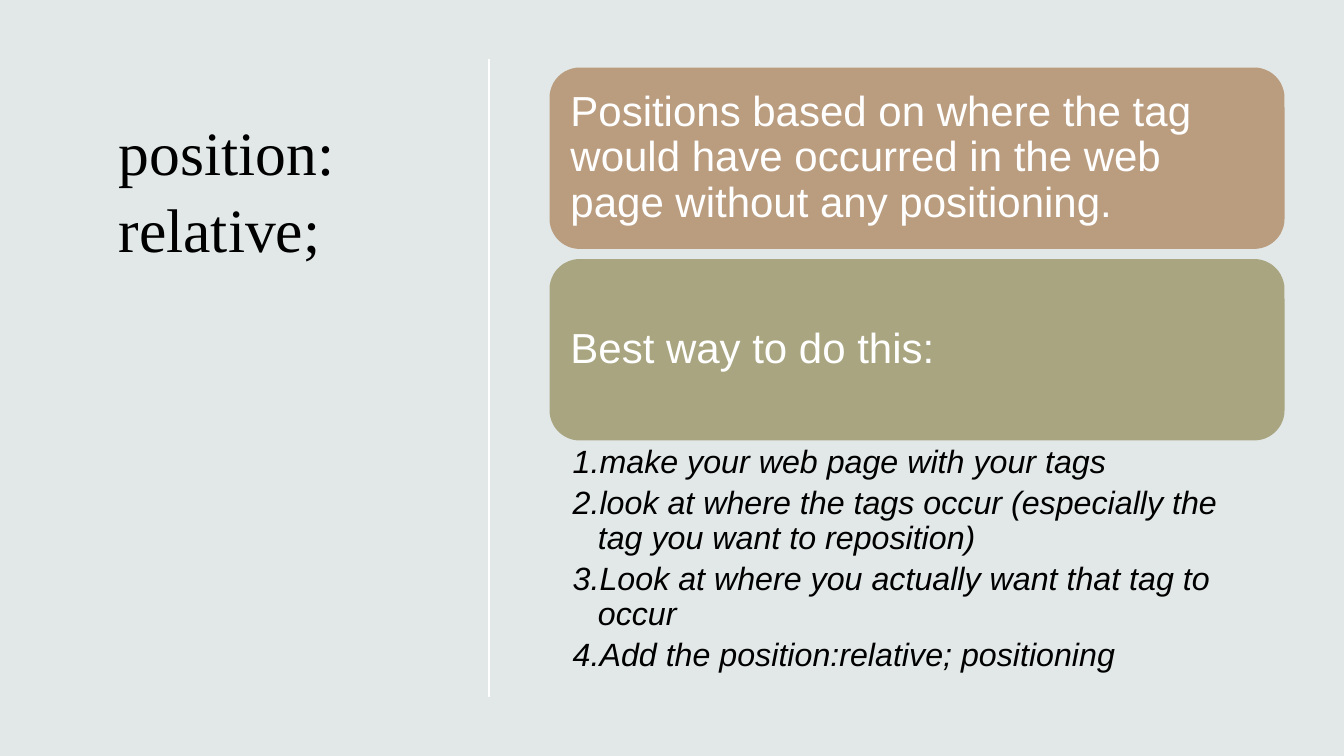
"""Build the slide explaining relative positioning."""
from lxml.etree import SubElement
from pptx import Presentation
from pptx.dml.color import RGBColor
from pptx.enum.shapes import MSO_CONNECTOR, MSO_SHAPE
from pptx.enum.text import MSO_ANCHOR, PP_ALIGN
from pptx.oxml.ns import qn
from pptx.util import Inches, Pt

BACKGROUND = RGBColor(0xE2, 0xE8, 0xE8)
TAN = RGBColor(0xBA, 0x9C, 0x7F)
OLIVE = RGBColor(0xA8, 0xA5, 0x80)
WHITE = RGBColor(0xFF, 0xFF, 0xFF)
BLACK = RGBColor(0x00, 0x00, 0x00)

CARDS = [
    ("Positions based on where the tag would have occurred in the web page "
     "without any positioning.", TAN),
    ("Best way to do this:", OLIVE),
]
STEPS = [
    "make your web page with your tags",
    "look at where the tags occur (especially the tag you want to reposition)",
    "Look at where you actually want that tag to occur",
    "Add the position:relative; positioning",
]


def style(p, name, size, color, spacing, italic=False):
    p.alignment = PP_ALIGN.LEFT
    p.line_spacing = spacing
    for r in p.runs:
        r.font.name = name
        r.font.size = Pt(size)
        r.font.color.rgb = color
        r.font.italic = italic


def set_margins(tf, side, edge):
    tf.word_wrap = True
    tf.margin_left = tf.margin_right = Inches(side)
    tf.margin_top = tf.margin_bottom = Inches(edge)


prs = Presentation()
prs.slide_width = Inches(13.33)
prs.slide_height = Inches(7.5)
slide = prs.slides.add_slide(prs.slide_layouts[6])
slide.background.fill.solid()
slide.background.fill.fore_color.rgb = BACKGROUND

title = slide.shapes.add_textbox(Inches(1.08), Inches(1.04), Inches(3.06), Inches(5.13))
set_margins(title.text_frame, 0.1, 0.05)
title.text_frame.text = "position: relative;"
style(title.text_frame.paragraphs[0], "Times New Roman", 44, BLACK, 1.05)

divider = slide.shapes.add_connector(
    MSO_CONNECTOR.STRAIGHT, Inches(4.85), Inches(0.59), Inches(4.85), Inches(6.91))
divider.line.color.rgb = WHITE
divider.line.width = Pt(1)
SubElement(divider._element.spPr, qn("a:effectLst"))

for i, (text, color) in enumerate(CARDS):
    card = slide.shapes.add_shape(
        MSO_SHAPE.ROUNDED_RECTANGLE,
        Inches(5.45), Inches(0.67 + 1.9 * i), Inches(7.29), Inches(1.8))
    card.shadow.inherit = False
    card.fill.solid()
    card.fill.fore_color.rgb = color
    card.line.fill.background()
    tf = card.text_frame
    set_margins(tf, 0.12, 0.12)
    tf.vertical_anchor = MSO_ANCHOR.MIDDLE
    tf.text = text
    style(tf.paragraphs[0], "Arial", 30, WHITE, 0.9)

steps = slide.shapes.add_textbox(Inches(5.45), Inches(4.38), Inches(7.29), Inches(2.44))
tf = steps.text_frame
set_margins(tf, 0.23, 0.04)
tf.text = "\n".join(STEPS)
for p in tf.paragraphs:
    style(p, "Arial", 23, BLACK, 0.9, italic=True)
    p.space_after = Pt(4.6)
    pPr = p._p.get_or_add_pPr()
    pPr.set("marL", str(Inches(0.25)))
    pPr.set("indent", str(-Inches(0.25)))
    SubElement(pPr, qn("a:buAutoNum"), type="arabicPeriod")

prs.save("out.pptx")
